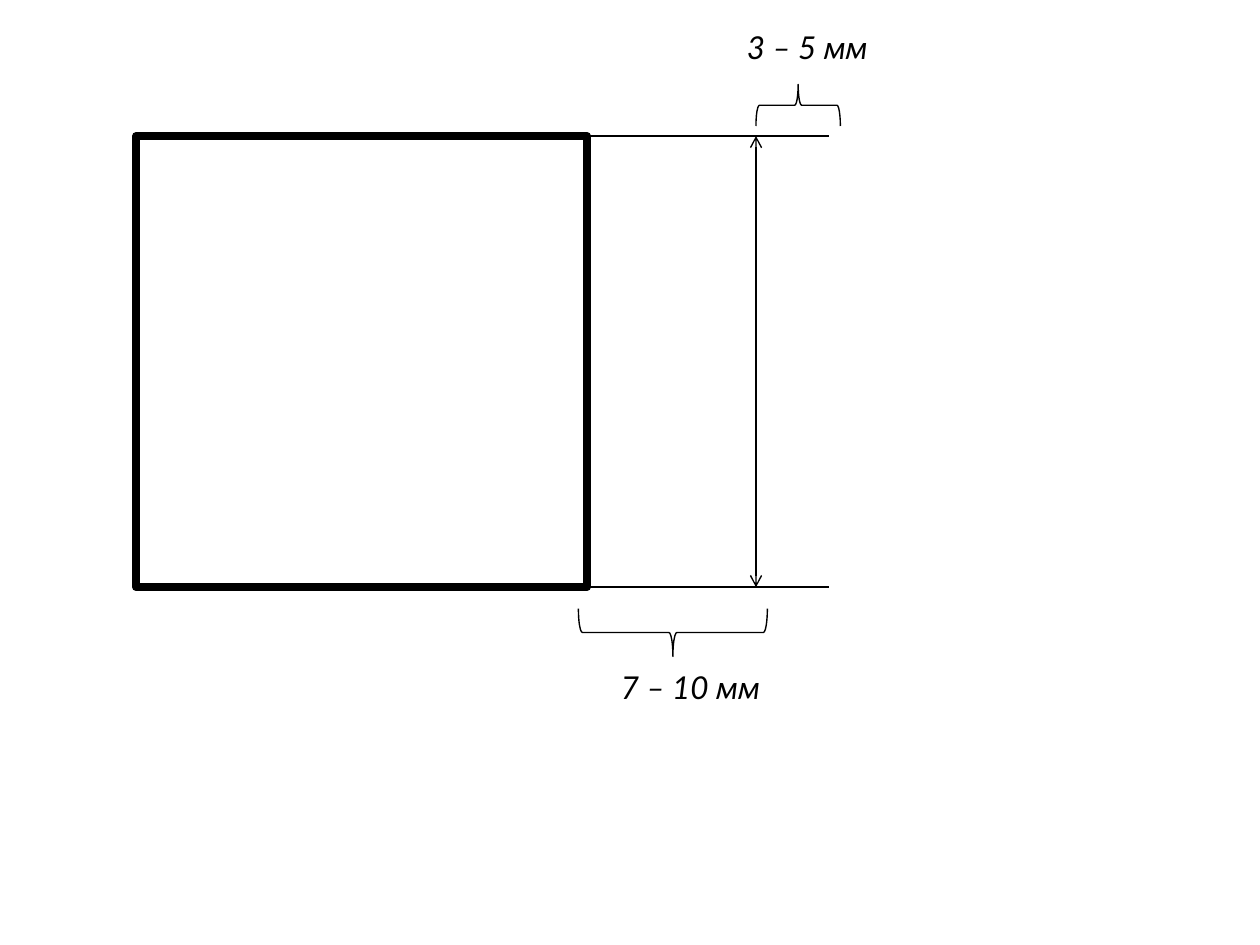
from dataclasses import dataclass

import pptx
import pptx.dml.color
import pptx.enum.shapes
import pptx.enum.text
import pptx.oxml
import pptx.oxml.ns
import pptx.util
from pptx.util import Inches

BLACK = pptx.dml.color.RGBColor(0x00, 0x00, 0x00)
WHITE = pptx.dml.color.RGBColor(0xFF, 0xFF, 0xFF)
FONT_NAME = "Lato"
THIN_LINE = 0.79
THICK_LINE = 4.5

SQUARE_LEFT = 1.08
SQUARE_TOP = 1.08
SQUARE_SIDE = 3.58
SQUARE_RIGHT = SQUARE_LEFT + SQUARE_SIDE
SQUARE_BOTTOM = SQUARE_TOP + SQUARE_SIDE
EXTENSION_END = 6.58
DIMENSION_X = 6.0


@dataclass(frozen=True)
class Line:
    start_x: float
    start_y: float
    end_x: float
    end_y: float
    arrows: bool = False


@dataclass(frozen=True)
class Brace:
    left: float
    top: float
    width: float
    height: float
    rotation: int


@dataclass(frozen=True)
class Label:
    text: str
    left: float
    top: float
    width: float


LINES = [
    Line(SQUARE_RIGHT, SQUARE_TOP, EXTENSION_END, SQUARE_TOP),
    Line(SQUARE_RIGHT, SQUARE_BOTTOM, EXTENSION_END, SQUARE_BOTTOM),
    Line(DIMENSION_X, SQUARE_TOP, DIMENSION_X, SQUARE_BOTTOM, arrows=True),
]
BRACES = [
    Brace(6.17, 0.5, 0.33, 0.67, 270),
    Brace(5.15, 4.27, 0.38, 1.5, 90),
]
LABELS = [
    Label("7 – 10 мм", 4.83, 5.25, 1.58),
    Label("3 – 5 мм", 5.83, 0.17, 1.75),
]


def set_line(line: pptx.dml.line.LineFormat, width: float) -> None:
    line.color.rgb = BLACK
    line.width = pptx.util.Pt(width)


def draw_square(slide: pptx.slide.Slide) -> None:
    square = slide.shapes.add_shape(
        pptx.enum.shapes.MSO_SHAPE.RECTANGLE,
        Inches(SQUARE_LEFT), Inches(SQUARE_TOP),
        Inches(SQUARE_SIDE), Inches(SQUARE_SIDE),
    )
    square.shadow.inherit = False
    square.fill.solid()
    square.fill.fore_color.rgb = WHITE
    set_line(square.line, THICK_LINE)


def draw_line(slide: pptx.slide.Slide, line: Line) -> None:
    connector = slide.shapes.add_connector(
        pptx.enum.shapes.MSO_CONNECTOR.STRAIGHT,
        Inches(line.start_x), Inches(line.start_y),
        Inches(line.end_x), Inches(line.end_y),
    )
    set_line(connector.line, THIN_LINE)
    if line.arrows:
        outline = connector.line._get_or_add_ln()
        for tag in ("a:headEnd", "a:tailEnd"):
            arrowhead = pptx.oxml.parse_xml(
                f'<{tag} {pptx.oxml.ns.nsdecls("a")} type="arrow"/>'
            )
            outline.append(arrowhead)
    properties = connector._element.spPr
    properties.append(
        pptx.oxml.parse_xml(f'<a:effectLst {pptx.oxml.ns.nsdecls("a")}/>')
    )


def draw_brace(slide: pptx.slide.Slide, brace: Brace) -> None:
    shape = slide.shapes.add_shape(
        pptx.enum.shapes.MSO_SHAPE.RIGHT_BRACE,
        Inches(brace.left), Inches(brace.top),
        Inches(brace.width), Inches(brace.height),
    )
    shape.rotation = brace.rotation
    shape.shadow.inherit = False
    shape.fill.background()
    set_line(shape.line, THIN_LINE)


def draw_label(slide: pptx.slide.Slide, label: Label) -> None:
    box = slide.shapes.add_textbox(
        Inches(label.left), Inches(label.top),
        Inches(label.width), Inches(0.4),
    )
    text_frame = box.text_frame
    text_frame.word_wrap = True
    text_frame.auto_size = pptx.enum.text.MSO_AUTO_SIZE.SHAPE_TO_FIT_TEXT
    text_frame.text = label.text
    font = text_frame.paragraphs[0].runs[0].font
    font.name = FONT_NAME
    font.size = pptx.util.Pt(18)
    font.italic = True
    font.color.rgb = BLACK


def main() -> None:
    presentation = pptx.Presentation()
    presentation.slide_width = Inches(10)
    presentation.slide_height = Inches(7.5)
    slide = presentation.slides.add_slide(presentation.slide_layouts[6])
    draw_square(slide)
    for line in LINES:
        draw_line(slide, line)
    for brace in BRACES:
        draw_brace(slide, brace)
    for label in LABELS:
        draw_label(slide, label)
    presentation.save("out.pptx")


if __name__ == "__main__":
    main()
